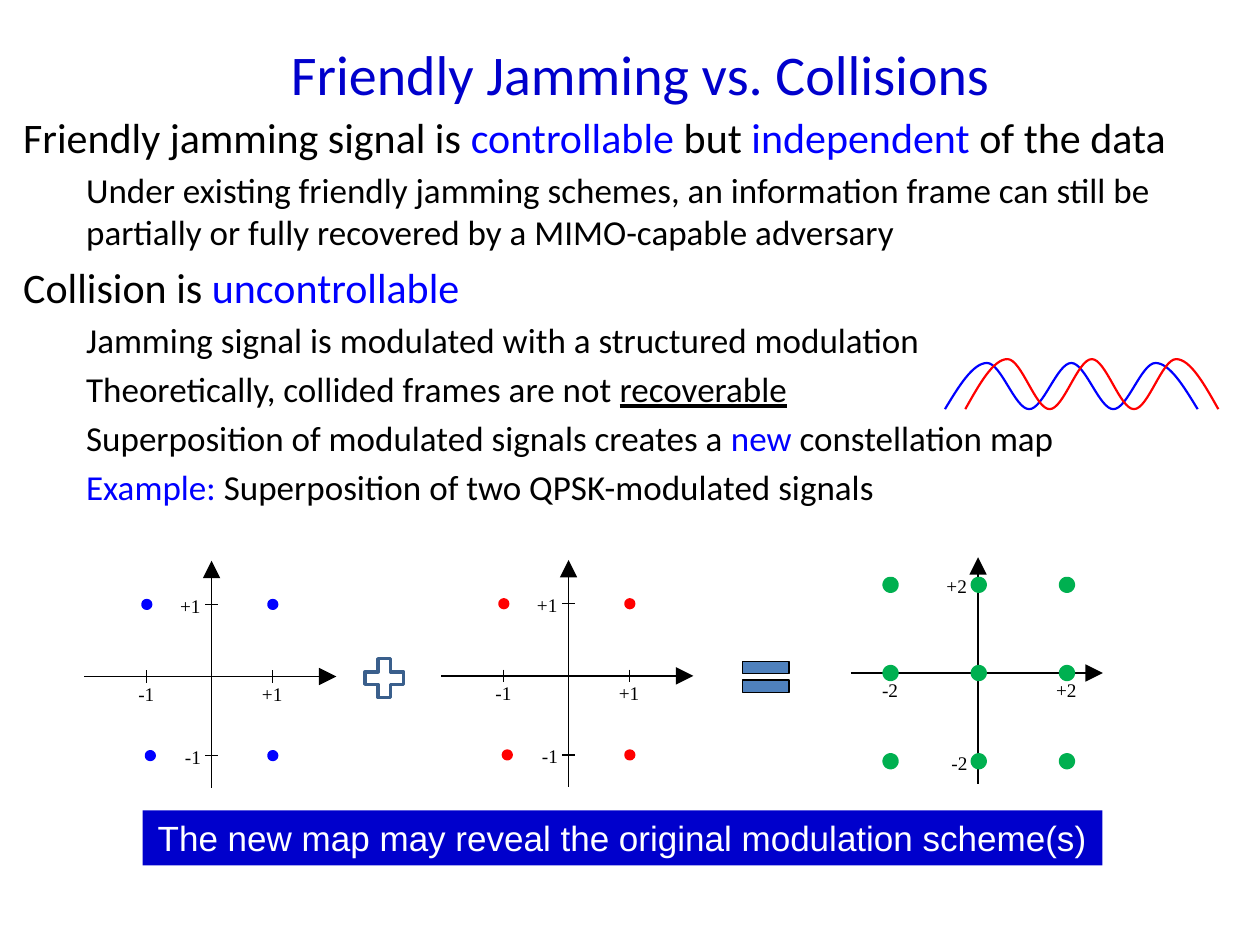
from dataclasses import dataclass

from lxml.etree import SubElement
from pptx import Presentation
from pptx.dml.color import RGBColor
from pptx.enum.shapes import MSO_CONNECTOR, MSO_SHAPE as Preset
from pptx.enum.text import MSO_ANCHOR as Anchor, MSO_AUTO_SIZE as Fit, PP_ALIGN as Align
from pptx.oxml.ns import qn
from pptx.util import Pt


@dataclass(frozen=True)
class Theme:
    black: str = "000000"
    white: str = "FFFFFF"
    navy: str = "0000CC"
    blue: str = "0000FF"
    red: str = "FF0000"
    green: str = "00B050"
    steel: str = "4F81BD"
    steel_edge: str = "3A5F8C"
    title: int = 32
    heading: int = 24
    detail: int = 20
    label: int = 11
    body_font: str = "Calibri"
    label_font: str = "Times New Roman"
    banner_font: str = "Arial"


THEME = Theme()

BODY = [
    (0, ["Friendly jamming signal is ", ("controllable", {"color": THEME.blue}), " but ",
         ("independent", {"color": THEME.blue}), " of the data"]),
    (1, ["Under existing friendly jamming schemes, an information frame can still be "
         "partially or fully recovered by a MIMO-capable adversary"]),
    (0, ["Collision is ", ("uncontrollable", {"color": THEME.blue})]),
    (1, ["Jamming signal is modulated with a structured modulation"]),
    (1, ["Theoretically, collided frames are not ", ("recoverable", {"underline": True})]),
    (1, ["Superposition of modulated signals creates a ", ("new", {"color": THEME.blue}),
         " constellation map"]),
    (1, [("Example: ", {"color": THEME.blue}), "Superposition of two QPSK-modulated signals"]),
]


def write(para, text, *, size, font=THEME.body_font, color=THEME.black, underline=None,
          align=None):
    """Append one formatted span to a paragraph."""
    if align is not None:
        para.alignment = align
    span = para.add_run()
    span.text = text
    span.font.size = Pt(size)
    span.font.name = font
    span.font.color.rgb = RGBColor.from_string(color)
    span.font.underline = underline


def place(shape, left, top, width, height):
    shape.left, shape.top, shape.width, shape.height = map(Pt, (left, top, width, height))


def set_line(shape, color, width):
    shape.line.color.rgb = RGBColor.from_string(color)
    shape.line.width = Pt(width)


def add_preset(shapes, preset, box, fill, line=None):
    shape = shapes.add_shape(preset, *map(Pt, box))
    shape.shadow.inherit = False
    shape.fill.solid()
    shape.fill.fore_color.rgb = RGBColor.from_string(fill)
    if line:
        set_line(shape, *line)
    else:
        shape.line.fill.background()
    return shape


def add_segment(shapes, start, end, width, arrow=False):
    segment = shapes.add_connector(MSO_CONNECTOR.STRAIGHT, *map(Pt, (*start, *end)))
    set_line(segment, THEME.black, width)
    if arrow:
        SubElement(segment.line._get_or_add_ln(), qn("a:tailEnd"),
                   type="triangle", w="lg", len="lg")
    SubElement(segment._element.spPr, qn("a:effectLst"))


def add_title(page, box):
    title = page.shapes.title
    place(title, *box)
    frame = title.text_frame
    frame.auto_size = Fit.NONE
    frame.vertical_anchor = Anchor.MIDDLE
    write(frame.paragraphs[0], "Friendly Jamming vs. Collisions", size=THEME.title,
          color=THEME.navy, align=Align.CENTER)


def add_body(page, box):
    body = page.placeholders[1]
    place(body, *box)
    frame = body.text_frame
    frame.auto_size = Fit.NONE
    for index, (level, spans) in enumerate(BODY):
        para = frame.paragraphs[0] if index == 0 else frame.add_paragraph()
        para.level = level
        size = THEME.detail if level else THEME.heading
        props = para._p.get_or_add_pPr()
        props.set("marL", str(Pt(36 * level)))
        props.set("indent", "0")
        SubElement(props, qn("a:buNone"))
        para.space_before = Pt(0.2 * size if index else 0)
        for span in spans:
            text, style = (span, {}) if isinstance(span, str) else span
            write(para, text, size=size, **style)


def add_wave(page, box, color):
    """Draw three crests as cubic curves, flat at each inner turning point."""
    left, top, width, height = box
    knots = [(Pt(left + width * step / 6), Pt(top + height * (step % 2 == 0)))
             for step in range(7)]
    builder = page.shapes.build_freeform(*knots[0])
    builder.add_line_segments(knots[1:], close=False)
    wave = builder.convert_to_shape()
    wave.shadow.inherit = False
    wave.fill.background()
    set_line(wave, color, 1.25)

    points = [(int(pt.get("x")), int(pt.get("y"))) for pt in wave._element.iter(qn("a:pt"))]
    lines = list(wave._element.iter(qn("a:lnTo")))
    for index, line in enumerate(lines):
        (x0, y0), (x1, y1) = points[index:index + 2]
        middle = (y0 + y1) // 2
        first_y = middle if index == 0 else y0
        second_y = middle if index == len(lines) - 1 else y1
        curve = line.getparent()
        bezier = SubElement(curve, qn("a:cubicBezTo"))
        for x, y in ((x0 + (x1 - x0) // 3, first_y),
                     (x0 + 2 * (x1 - x0) // 3, second_y), (x1, y1)):
            SubElement(bezier, qn("a:pt"), x=str(x), y=str(y))
        curve.replace(line, bezier)


def add_label(shapes, text, left, top, width):
    box = shapes.add_textbox(Pt(left), Pt(top), Pt(width), Pt(20.6))
    frame = box.text_frame
    frame.word_wrap = False
    frame.auto_size = Fit.SHAPE_TO_FIT_TEXT
    write(frame.paragraphs[0], text, size=THEME.label, font=THEME.label_font)


def add_constellation(page, box, ticks_x, ticks_y, dots, value, color, dot_line):
    """Draw axes, ticks and dots; ticks and dots are offsets from the axis crossing."""
    left, top, width, height = box
    center_x, center_y = left + 72.7, top + 66.2
    shapes = page.shapes.add_group_shape().shapes
    add_segment(shapes, (left, center_y), (left + width, center_y), 1, arrow=True)
    add_segment(shapes, (center_x, top + height), (center_x, top), 1, arrow=True)
    for x in ticks_x:
        add_segment(shapes, (center_x + x, center_y - 3.6), (center_x + x, center_y + 3.6), 0.75)
    for y in ticks_y:
        add_segment(shapes, (center_x - 3.6, center_y + y), (center_x + 3.6, center_y + y), 0.75)

    size = 4.4
    for x, y in dots:
        add_preset(shapes, Preset.OVAL,
                   (center_x + x - size / 2, center_y + y - size / 2, size, size),
                   color, (color, dot_line))

    labels = ((f"-{value}", 23.8), (f"+{value}", 26.6))
    for (text, label_width), x, y in zip(labels, ticks_x, reversed(ticks_y)):
        add_label(shapes, text, center_x + x - label_width / 2, center_y - 0.5, label_width)
        add_label(shapes, text, center_x + 1.5 - label_width, center_y + y - 9.5, label_width)


def add_equation(page, left, top):
    """Lay out two QPSK maps, the operators and the combined map."""
    size = (144, 129.6)
    qpsk = {"ticks_x": (-37, 35), "ticks_y": (-41.2, 45.2), "value": 1, "dot_line": 2,
            "dots": [(-37, -41.2), (35, -41.2), (-35, 45.2), (35, 45.2)]}
    add_constellation(page, (left, top + 2, *size), color=THEME.blue, **qpsk)
    add_preset(page.shapes, Preset.MATH_PLUS, (left + 156.3, top + 54, 30.2, 30.2),
               THEME.white, (THEME.steel_edge, 2))
    add_constellation(page, (left + 204, top + 1.6, *size), color=THEME.red, **qpsk)
    add_preset(page.shapes, Preset.MATH_EQUAL, (left + 371.5, top + 53.3, 36, 30.2),
               THEME.steel, (THEME.black, 0.75))
    grid = (-50, 0.4, 50.8)
    add_constellation(page, (left + 438, top, *size), ticks_x=(-50, 50.8),
                      ticks_y=(-50.4, 50.4), value=2, color=THEME.green, dot_line=5,
                      dots=[(x, y) for x in grid for y in (-50.4, 0, 50.4)])


def add_banner(page, box):
    banner = add_preset(page.shapes, Preset.RECTANGLE, box, THEME.navy)
    frame = banner.text_frame
    frame.word_wrap = True
    frame.vertical_anchor = Anchor.MIDDLE
    write(frame.paragraphs[0], "The new map may reveal the original modulation scheme(s)",
          size=THEME.detail, font=THEME.banner_font, color=THEME.white, align=Align.CENTER)


def main():
    deck = Presentation()
    deck.slide_width, deck.slide_height = Pt(720), Pt(540)
    page = deck.slides.add_slide(deck.slide_layouts[1])
    add_title(page, (6, 12, 720, 60))
    add_body(page, (6, 60, 702, 468))
    add_wave(page, (540, 207.4, 144.4, 26.4), THEME.blue)
    add_wave(page, (551.6, 205.2, 144.6, 28.6), THEME.red)
    add_equation(page, 48.2, 318.4)
    add_banner(page, (81.5, 463, 548.5, 31.5))
    deck.save("out.pptx")


if __name__ == "__main__":
    main()
